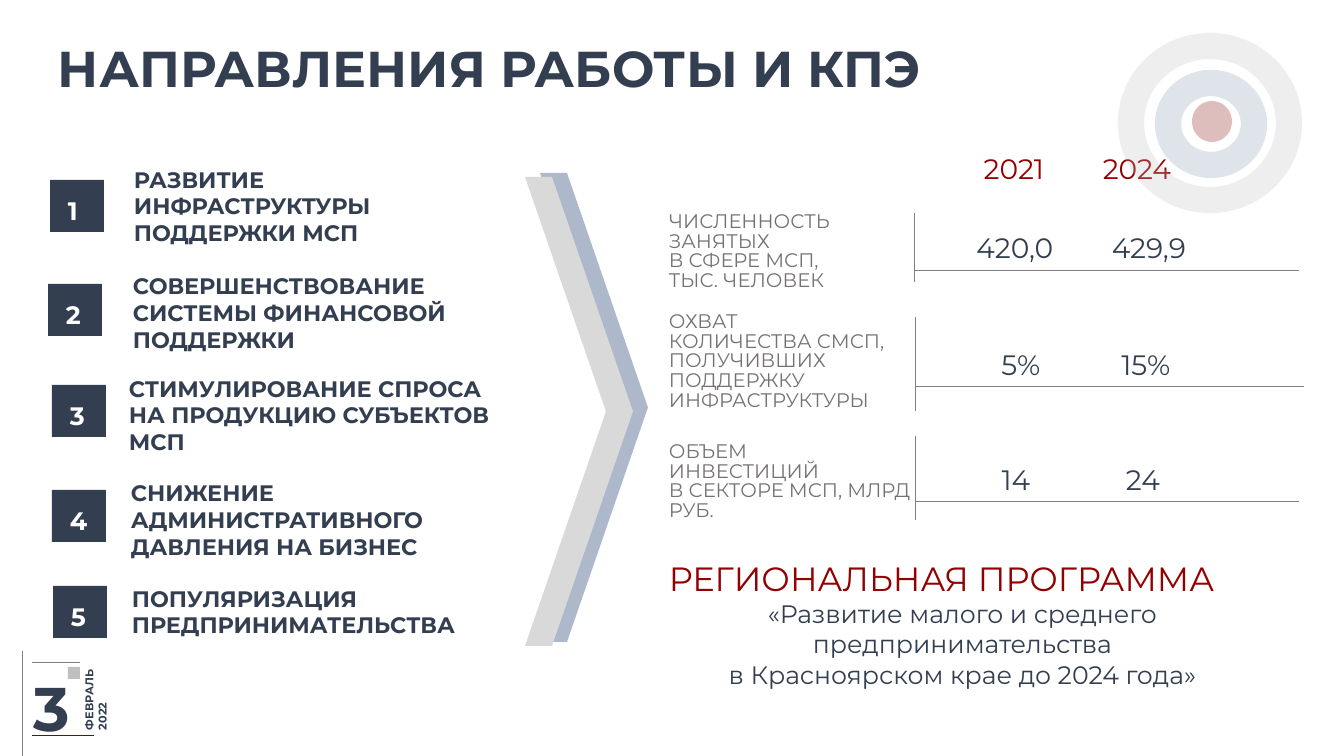
from lxml.etree import SubElement
from pptx import Presentation
from pptx.dml.color import RGBColor
from pptx.enum.shapes import MSO_CONNECTOR, MSO_SHAPE as Preset
from pptx.enum.text import MSO_ANCHOR as Anchor, PP_ALIGN as Align
from pptx.oxml.ns import qn
from pptx.util import Emu, Pt

FONT = "Montserrat"
NAVY, RED, DARK_RED, GRAY, LINE_GRAY = "333F50", "920000", "820000", "767171", "808080"

TITLE = "НАПРАВЛЕНИЯ РАБОТЫ И КПЭ"
# badge position, text box, paragraphs
DIRECTIONS = [
    ((50, 180), (124, 183, 340, 46), ["РАЗВИТИЕ ИНФРАСТРУКТУРЫ", "ПОДДЕРЖКИ МСП"]),
    ((48, 284), (123, 282, 403, 61), ["СОВЕРШЕНСТВОВАНИЕ СИСТЕМЫ ФИНАНСОВОЙ ПОДДЕРЖКИ"]),
    ((52, 385), (119, 390, 399, 50), ["СТИМУЛИРОВАНИЕ СПРОСА НА ПРОДУКЦИЮ СУБЪЕКТОВ МСП"]),
    ((52, 490), (121, 493, 392, 53), ["СНИЖЕНИЕ АДМИНИСТРАТИВНОГО ДАВЛЕНИЯ НА БИЗНЕС"]),
    ((53, 586), (122, 592, 405, 39), ["ПОПУЛЯРИЗАЦИЯ ПРЕДПРИНИМАТЕЛЬСТВА"]),
]
BADGE_WIDTH, BADGE_HEIGHT = 54, 52
CHEVRONS = [((540, 173, 108, 469), "ADB9CA"), ((525, 177, 108, 469), "D9D9D9")]
TARGET_RINGS = [
    ((1131, 46, 158, 154), "BFBFBF"),
    ((1168, 83, 86, 82), "8497B0"),
    ((1205, 114, 14, 15), DARK_RED),
]
# values with the centre of each, and the top of their row
YEARS = [("2021", 1014), ("2024", 1137)]
YEARS_TOP = 147
# label box, label, values, values top, divider (x, top, bottom), underline (y, right)
INDICATORS = [
    ((659, 208, 222, 90), ["ЧИСЛЕННОСТЬ ЗАНЯТЫХ\vВ СФЕРЕ МСП, ТЫС. ЧЕЛОВЕК"],
     [("420,0", 1015), ("429,9", 1149)], 226, (914, 213, 282), (270, 1299)),
    ((659, 308, 280, 106), ["ОХВАТ", "КОЛИЧЕСТВА СМСП, ПОЛУЧИВШИХ ПОДДЕРЖКУ", "ИНФРАСТРУКТУРЫ"],
     [("5%", 1021), ("15%", 1146)], 343, (915, 317, 411), (386, 1304)),
    ((659, 438, 273, 90), ["ОБЪЕМ", "ИНВЕСТИЦИЙ", "В СЕКТОРЕ МСП, МЛРД РУБ."],
     [("14", 1016), ("24", 1143)], 458, (915, 436, 520), (501, 1299)),
]
PROGRAM_BOX = (659, 599, 607, 49)
PROGRAM = "РЕГИОНАЛЬНАЯ ПРОГРАММА"
PROGRAM_NAME = ["«Развитие малого и среднего предпринимательства",
                "в Красноярском крае до 2024 года»"]
VALUES_LEFT, VALUES_WIDTH, INSET = 937, 367, 10


def px(length):
    return Emu(round(length * 914400 / 100.8))


def color(value):
    return RGBColor.from_string(value)


def add_paragraph(frame, text, size, fill, bold=False, align=None, spacing=None, tabs=()):
    first = frame.paragraphs[0]
    paragraph = first if not first.runs else frame.add_paragraph()
    if align is not None:
        paragraph.alignment = align
    if spacing:
        paragraph.line_spacing = Pt(spacing)
    if tabs:
        tab_list = SubElement(paragraph._p.get_or_add_pPr(), qn("a:tabLst"))
        for position in tabs:
            SubElement(tab_list, qn("a:tab"), pos=str(px(position)), algn="ctr")
    for index, line in enumerate(text.split("\v")):
        if index:
            paragraph.add_line_break()
        run = paragraph.add_run()
        run.text = line
        run.font.name, run.font.size, run.font.bold = FONT, Pt(size), bold
        run.font.color.rgb = color(fill)
    return paragraph


def add_text(box, texts, size, fill, anchor=Anchor.TOP, wrap=True, **paragraph_format):
    text_box = slide.shapes.add_textbox(*map(px, box))
    frame = text_box.text_frame
    frame.word_wrap, frame.vertical_anchor = wrap, anchor
    for text in texts:
        add_paragraph(frame, text, size, fill, **paragraph_format)
    return text_box


def add_values(values, top, fill):
    """Write a row of values, each centred on its own tab stop."""
    text = "".join("\t" + value for value, _ in values)
    tabs = [center - VALUES_LEFT - INSET for _, center in values]
    add_text((VALUES_LEFT, top, VALUES_WIDTH, 44), [text], 20, fill, tabs=tabs)


def add_filled(preset, box, fill):
    shape = slide.shapes.add_shape(preset, *map(px, box))
    shape.shadow.inherit = False
    shape.fill.solid()
    shape.fill.fore_color.rgb = color(fill)
    shape.line.fill.background()
    return shape


def add_ring(box, stroke):
    ring = slide.shapes.add_shape(Preset.OVAL, *map(px, box))
    ring.shadow.inherit = False
    ring.fill.background()
    ring.line.width = Pt(18.75)
    ring.line.color.rgb = color(stroke)
    stroke_color = ring.line._ln.find(".//" + qn("a:srgbClr"))
    SubElement(stroke_color, qn("a:alpha"), val="26000")


def add_line(x1, y1, x2, y2, stroke=LINE_GRAY):
    line = slide.shapes.add_connector(MSO_CONNECTOR.STRAIGHT, *map(px, (x1, y1, x2, y2)))
    line.line.width = Pt(0.5)
    line.line.color.rgb = color(stroke)
    SubElement(line._element.spPr, qn("a:effectLst"))


def outline_text(text_box, stroke, width):
    properties = text_box.text_frame.paragraphs[0].runs[0]._r.get_or_add_rPr()
    outline = SubElement(properties, qn("a:ln"), w=str(Pt(width)))
    fill = SubElement(outline, qn("a:solidFill"))
    SubElement(fill, qn("a:srgbClr"), val=stroke)
    properties.insert(0, outline)


presentation = Presentation()
presentation.slide_width, presentation.slide_height = px(1344), px(756)
slide = presentation.slides.add_slide(presentation.slide_layouts[6])

title = add_text((48, 31, 1027, 73), [TITLE], 36, NAVY, anchor=Anchor.MIDDLE, bold=True)
outline_text(title, NAVY, 0.8)

add_values(YEARS, YEARS_TOP, RED)
for box, stroke in TARGET_RINGS:
    add_ring(box, stroke)

program = add_text(PROGRAM_BOX, [PROGRAM], 24, RED, anchor=Anchor.MIDDLE)
for text in PROGRAM_NAME:
    add_paragraph(program.text_frame, text, 18, NAVY, align=Align.CENTER)

for number, ((left, top), box, texts) in enumerate(DIRECTIONS, 1):
    add_text(box, texts, 16, NAVY, anchor=Anchor.MIDDLE, bold=True)
    add_filled(Preset.RECTANGLE, (left, top, BADGE_WIDTH, BADGE_HEIGHT), NAVY)
    add_text((left + 8, top - 4, 37, 45), [str(number)], 18, "FFFFFF",
             wrap=False, bold=True, spacing=32)

for box, fill in CHEVRONS:
    add_filled(Preset.CHEVRON, box, fill).adjustments[0] = 0.75

for box, label, values, top, divider, (underline, right) in INDICATORS:
    add_text(box, label, 14, GRAY, spacing=14)
    add_values(values, top, NAVY)
    x, start, end = divider
    add_line(x, start, x, end)
    add_line(915, underline, right, underline)

# Slide number and date
add_filled(Preset.RECTANGLE, (68, 667, 12, 12), "BFBFBF")
add_line(22, 651, 22, 756)
date = add_text((50, 667, 91, 55), ["ФЕВРАЛЬ 2022"], 8, NAVY, anchor=Anchor.MIDDLE, bold=True)
date.rotation = 270
add_text((24, 679, 70, 55), ["3"], 44, NAVY, anchor=Anchor.MIDDLE, bold=True)
add_line(32, 662, 80, 662)
add_line(32, 735, 94, 735, DARK_RED)

presentation.save("out.pptx")
